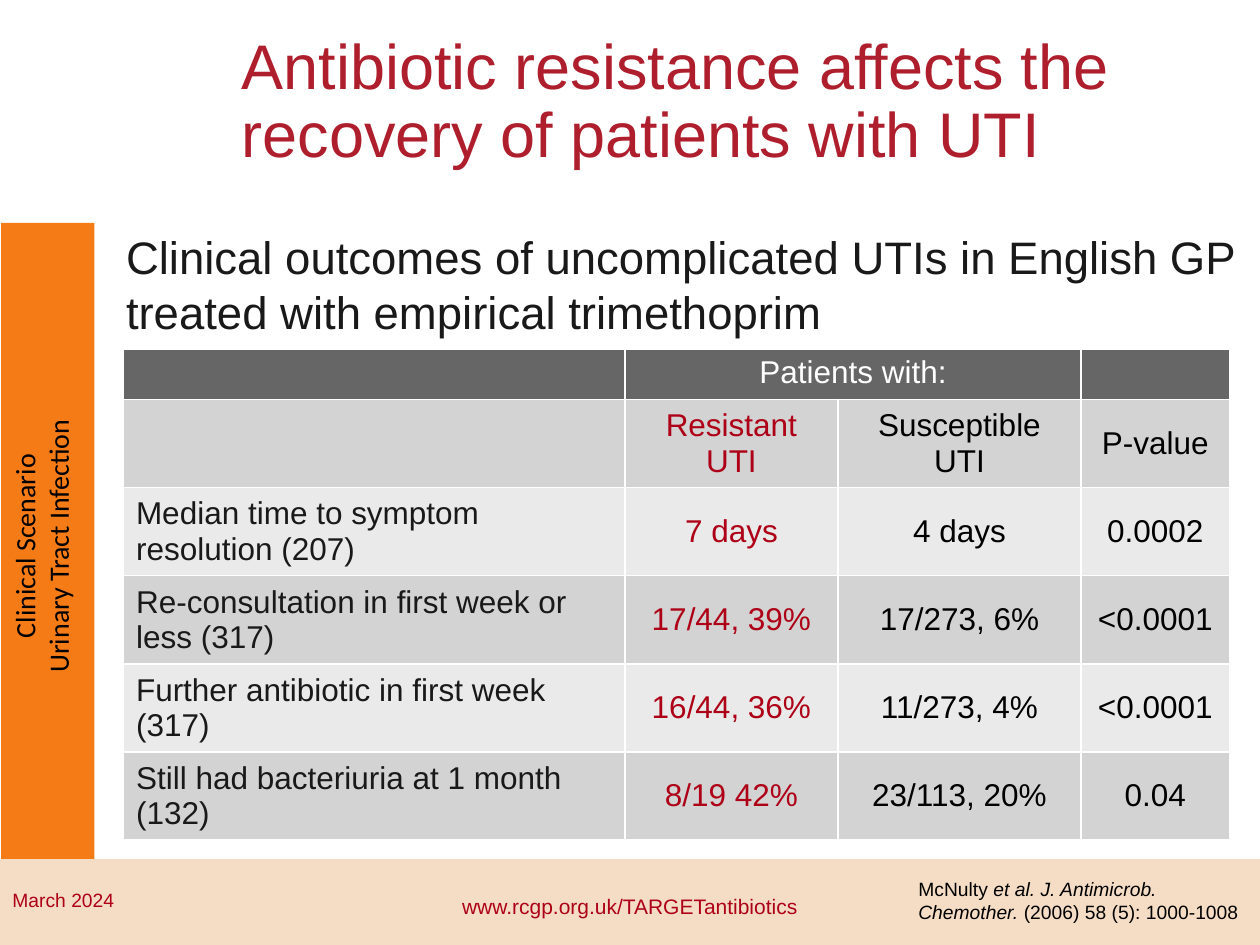
from lxml.etree import SubElement
from pptx import Presentation
from pptx.dml.color import RGBColor
from pptx.enum.shapes import MSO_SHAPE as Shape
from pptx.enum.text import MSO_ANCHOR as Anchor, MSO_AUTO_SIZE as AutoSize, PP_ALIGN as Align
from pptx.oxml.ns import qn
from pptx.util import Inches, Pt

WIDTH, HEIGHT = Inches(10), Inches(7.5)
COLOURS = {
    "title": "AF1E2C", "accent": "AD0016", "text": "191919", "black": "000000", "white": "FFFFFF",
    "sidebar": "F57B17", "footer": "F4DDC4", "header": "666666", "odd": "D3D3D3", "even": "EAEAEA",
}
COLUMN_SHARES = (39.8, 16.9, 19.3, 11.8)
ROW_SHARES = (5.33,) + (9.33,) * 5
OUTCOMES = [
    ("", "Patients with:", "", ""),
    ("", "Resistant UTI", "Susceptible UTI", "P-value"),
    ("Median time to symptom resolution (207)", "7 days", "4 days", "0.0002"),
    ("Re-consultation in first week or less (317)", "17/44, 39%", "17/273, 6%", "<0.0001"),
    ("Further antibiotic in first week (317)", "16/44, 36%", "11/273, 4%", "<0.0001"),
    ("Still had bacteriuria at 1 month (132)", "8/19 42%", "23/113, 20%", "0.04"),
]


def across(percent):
    return int(WIDTH * percent / 100)


def down(percent):
    return int(HEIGHT * percent / 100)


def area(left, top, width, height):
    return across(left), down(top), across(width), down(height)


def colour(name):
    return RGBColor.from_string(COLOURS[name])


def style(paragraph, size, ink, align=Align.LEFT, face="Arial"):
    paragraph.alignment = align
    paragraph.font.size = Pt(size)
    paragraph.font.name = face
    paragraph.font.color.rgb = colour(ink)


def fill_placeholder(holder, place, text, size, ink, anchor, spacing):
    holder.left, holder.top, holder.width, holder.height = place
    frame = holder.text_frame
    frame.text = text
    frame.word_wrap = True
    frame.auto_size = AutoSize.NONE
    frame.vertical_anchor = anchor
    paragraph = frame.paragraphs[0]
    paragraph.space_before = Pt(0)
    paragraph.line_spacing = spacing
    properties = paragraph._p.get_or_add_pPr()
    properties.set("marL", "0")
    properties.set("indent", "0")
    SubElement(properties, qn("a:buNone"))
    style(paragraph, size, ink)


def add_panel(slide, place, fill):
    panel = slide.shapes.add_shape(Shape.RECTANGLE, *place)
    panel.shadow.inherit = False
    panel.fill.solid()
    panel.fill.fore_color.rgb = colour(fill)
    panel.line.fill.background()
    panel.text_frame.vertical_anchor = Anchor.TOP
    return panel


def add_label(slide, place, runs, size, ink, align=Align.LEFT):
    frame = slide.shapes.add_textbox(*place).text_frame
    frame.word_wrap = True
    paragraph = frame.paragraphs[0]
    for text, italic in runs:
        run = paragraph.add_run()
        run.text = text
        if italic:
            run.font.italic = True
    style(paragraph, size, ink, align)


def add_sidebar(slide):
    sidebar = add_panel(slide, area(0.1, 23.6, 7.4, 68.4), "sidebar")
    frame = sidebar.text_frame
    frame._txBody.bodyPr.set("vert", "vert270")
    frame.text = "Clinical Scenario\nUrinary Tract Infection"
    for paragraph in frame.paragraphs:
        style(paragraph, 16, "black", Align.CENTER, "Calibri")


def set_borders(cell):
    properties = cell._tc.get_or_add_tcPr()
    for position, side in enumerate(("lnL", "lnR", "lnT", "lnB")):
        border = properties.makeelement(qn(f"a:{side}"), {"w": str(Pt(1))})
        solid = SubElement(border, qn("a:solidFill"))
        SubElement(solid, qn("a:srgbClr"), val=COLOURS["white"])
        properties.insert(position, border)


def format_cell(cell, row, column):
    cell.fill.solid()
    cell.fill.fore_color.rgb = colour("header" if row == 0 else "odd" if row % 2 else "even")
    cell.vertical_anchor = Anchor.TOP if row == 0 else Anchor.MIDDLE
    ink = "white" if row == 0 else ("text", "accent", "black", "black")[column]
    style(cell.text_frame.paragraphs[0], 18, ink, Align.CENTER if column else Align.LEFT)
    set_borders(cell)


def add_outcomes(slide):
    place = area(9.8, 36.93, sum(COLUMN_SHARES), sum(ROW_SHARES))
    table = slide.shapes.add_table(len(OUTCOMES), len(COLUMN_SHARES), *place).table
    for column, share in zip(table.columns, COLUMN_SHARES):
        column.width = across(share)
    for row, share in zip(table.rows, ROW_SHARES):
        row.height = down(share)
    for row, texts in enumerate(OUTCOMES):
        for column, text in enumerate(texts):
            cell = table.cell(row, column)
            cell.text = text
            format_cell(cell, row, column)
    table.cell(0, 1).merge(table.cell(0, 2))


def add_footer(slide):
    add_panel(slide, area(0, 90.93, 100, 9.07), "footer")
    date = add_panel(slide, area(0, 93.33, 33.4, 3.87), "footer")
    date.text_frame.text = "March 2024"
    style(date.text_frame.paragraphs[0], 11, "accent")
    website = [("www.rcgp.org.uk/TARGETantibiotics", False)]
    add_label(slide, area(33.3, 93.87, 33.4, 4), website, 12, "accent", Align.CENTER)
    citation = [
        ("McNulty ", False),
        ("et al. J. Antimicrob. Chemother.", True),
        (" (2006) 58 (5): 1000-1008", False),
    ]
    add_label(slide, area(71.9, 92.13, 28, 6.27), citation, 11, "black")


def main():
    deck = Presentation()
    deck.slide_width, deck.slide_height = WIDTH, HEIGHT
    slide = deck.slides.add_slide(deck.slide_layouts[1])
    title, subtitle = slide.placeholders
    fill_placeholder(title, area(18.2, 7.2, 79.5, 11.6),
                     "Antibiotic resistance affects the recovery of patients with UTI",
                     36, "title", Anchor.BOTTOM, 0.9)
    fill_placeholder(subtitle, area(9, 23.6, 91, 13.07),
                     "Clinical outcomes of uncomplicated UTIs in English GP "
                     "treated with empirical trimethoprim",
                     26, "text", Anchor.TOP, 1.0)
    add_sidebar(slide)
    add_outcomes(slide)
    add_footer(slide)
    deck.save("out.pptx")


if __name__ == "__main__":
    main()
